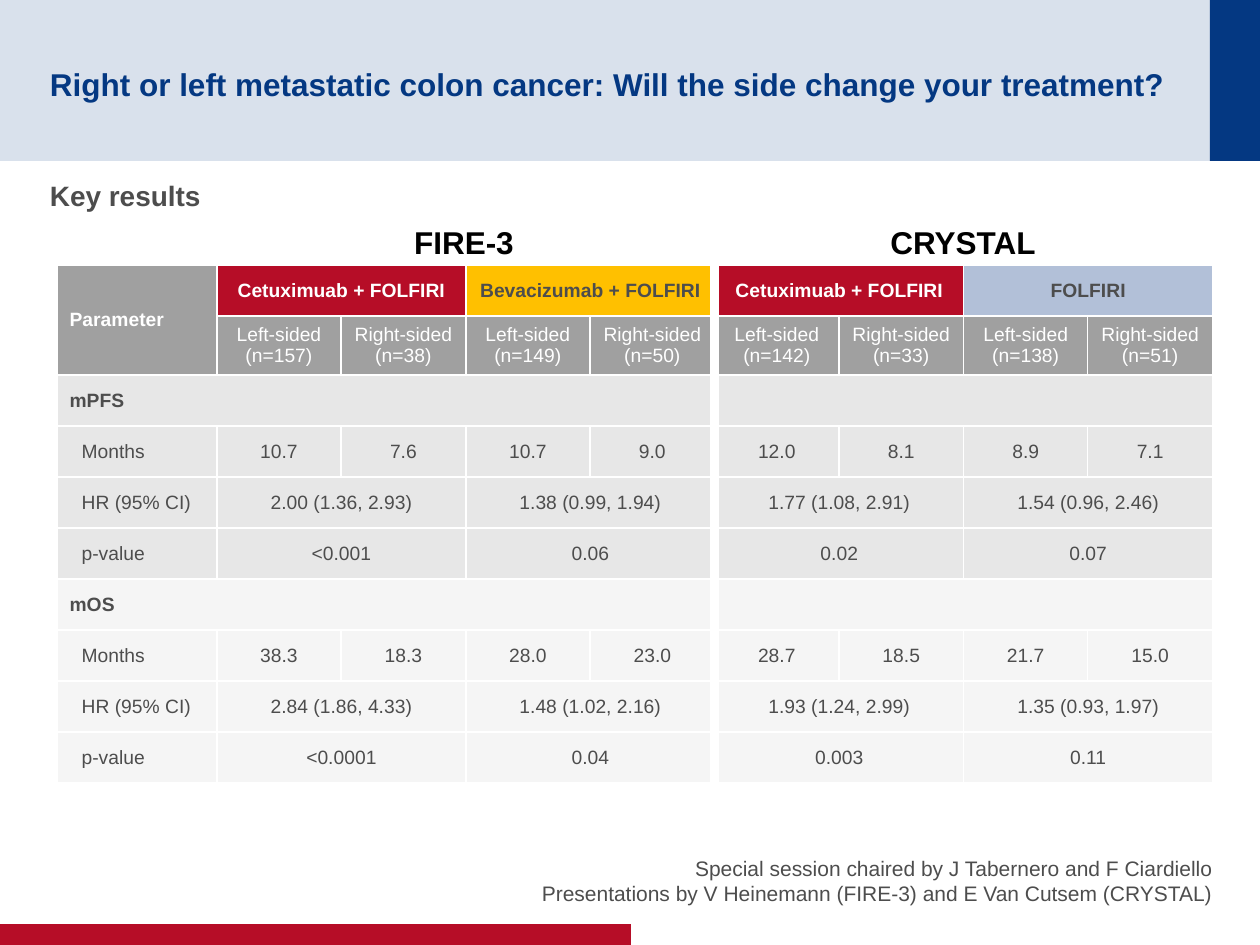
import dataclasses
import pptx
import pptx.dml.color
import pptx.enum.shapes
import pptx.enum.text
import pptx.oxml
import pptx.oxml.ns
import pptx.util

EMU_PER_PX = 914400 / 126
ALIGN = pptx.enum.text.PP_ALIGN
ANCHOR = pptx.enum.text.MSO_ANCHOR


@dataclasses.dataclass(frozen=True)
class Theme:
    font: str = "Arial"
    navy: str = "043882"
    red: str = "B60D27"
    amber: str = "FFC000"
    pale_blue: str = "B2C0D8"
    gray: str = "A0A0A0"
    ink: str = "4D4D4D"
    black: str = "000000"
    white: str = "FFFFFF"
    title_size: int = 18
    heading_size: int = 16
    note_size: int = 12
    cell_size: int = 11
    thin: int = 1
    gap: int = 6


THEME = Theme()
PAIRS = (1, 2, 2, 2, 2)
SINGLES = (1,) * 9
BAND = (5, 4)
LAST_FIRE_COLUMN = 4

PATIENTS = (157, 38, 149, 50, 142, 33, 138, 51)
ARMS = (
    ("Cetuximuab + FOLFIRI", THEME.red, THEME.white),
    ("Bevacizumab + FOLFIRI", THEME.amber, THEME.ink),
    ("Cetuximuab + FOLFIRI", THEME.red, THEME.white),
    ("FOLFIRI", THEME.pale_blue, THEME.ink),
)
OUTCOMES = (
    ("mPFS", 25,
     ("10.7", "7.6", "10.7", "9.0", "12.0", "8.1", "8.9", "7.1"),
     ("2.00 (1.36, 2.93)", "1.38 (0.99, 1.94)", "1.77 (1.08, 2.91)", "1.54 (0.96, 2.46)"),
     ("<0.001", "0.06", "0.02", "0.07")),
    ("mOS", 10,
     ("38.3", "18.3", "28.0", "23.0", "28.7", "18.5", "21.7", "15.0"),
     ("2.84 (1.86, 4.33)", "1.48 (1.02, 2.16)", "1.93 (1.24, 2.99)", "1.35 (0.93, 1.97)"),
     ("<0.0001", "0.04", "0.003", "0.11")),
)


def px(length):
    return pptx.util.Emu(round(length * EMU_PER_PX))


def rgb(color):
    return pptx.dml.color.RGBColor.from_string(color)


def paint(fill, holder, color, opacity=100):
    fill.solid()
    fill.fore_color.rgb = rgb(color)
    if opacity < 100:
        node = holder.find(".//" + pptx.oxml.ns.qn("a:srgbClr"))
        alpha = node.makeelement(pptx.oxml.ns.qn("a:alpha"), {"val": str(opacity * 1000)})
        node.append(alpha)


def write_text(frame, text, size, color, bold=False, align=ALIGN.LEFT, indent=0):
    for index, line in enumerate(text.split("\n")):
        para = frame.add_paragraph() if index else frame.paragraphs[0]
        para.alignment = align
        if indent:
            properties = para._p.get_or_add_pPr()
            properties.set("marL", str(px(indent)))
            properties.set("indent", "0")
        span = para.add_run()
        span.text = line
        span.font.name = THEME.font
        span.font.size = pptx.util.Pt(size)
        span.font.bold = bold
        span.font.color.rgb = rgb(color)


def add_block(page, left, top, width, height, color, opacity=100):
    block = page.shapes.add_shape(
        pptx.enum.shapes.MSO_SHAPE.RECTANGLE, px(left), px(top), px(width), px(height))
    block.shadow.inherit = False
    block.line.fill.background()
    paint(block.fill, block._element.spPr, color, opacity)


def add_text(page, left, top, width, height, text, insets=(0, 6, 0, 0),
             anchor=ANCHOR.TOP, wrap=True, **style):
    box = page.shapes.add_textbox(px(left), px(top), px(width), px(height))
    frame = box.text_frame
    frame.word_wrap = wrap
    frame.vertical_anchor = anchor
    frame.margin_left, frame.margin_top, frame.margin_right, frame.margin_bottom = map(px, insets)
    write_text(frame, text, **style)


def set_borders(cell, first, last):
    widths = {
        "lnL": THEME.gap if first == LAST_FIRE_COLUMN + 1 else THEME.thin,
        "lnR": THEME.gap if last == LAST_FIRE_COLUMN else THEME.thin,
        "lnT": THEME.thin,
        "lnB": THEME.thin,
    }
    properties = cell._tc.get_or_add_tcPr()
    for index, (side, width) in enumerate(widths.items()):
        border = pptx.oxml.parse_xml(
            f'<a:{side} {pptx.oxml.ns.nsdecls("a")} w="{pptx.util.Pt(width)}">'
            f'<a:solidFill><a:srgbClr val="{THEME.white}"/></a:solidFill></a:{side}>')
        properties.insert(index, border)


def fill_cell(table, row, column, span, text, back, opacity=100, **style):
    last = column + span - 1
    cell = table.cell(row, column)
    if span > 1:
        cell.merge(table.cell(row, last))
    for position in range(column, last + 1):
        part = table.cell(row, position)
        paint(part.fill, part._tc.get_or_add_tcPr(), back, opacity)
        set_borders(part, position, last if position == column else position)
    cell.vertical_anchor = ANCHOR.MIDDLE
    if text:
        write_text(cell.text_frame, text, size=THEME.cell_size, **style)


def fill_row(table, row, spans, texts, styles):
    column = 0
    for span, text, style in zip(spans, texts, styles):
        fill_cell(table, row, column, span, text, **style)
        column += span


def add_results(page):
    table = page.shapes.add_table(10, 9, px(57), px(265), px(1156), px(510)).table
    for column, width in zip(table.columns, (160,) + (124, 125) * 4):
        column.width = px(width)
    for row in table.rows:
        row.height = px(51)

    label = dict(back=THEME.gray, color=THEME.white, bold=True)
    arm_styles = [dict(back=back, color=color, bold=True, align=ALIGN.CENTER)
                  for _, back, color in ARMS]
    fill_row(table, 0, PAIRS, ["Parameter"] + [arm[0] for arm in ARMS], [label] + arm_styles)
    side = dict(back=THEME.gray, color=THEME.white, align=ALIGN.CENTER)
    sides = [f"{'Right' if index % 2 else 'Left'}-sided\n(n={count})"
             for index, count in enumerate(PATIENTS)]
    fill_row(table, 1, SINGLES, [""] + sides, [label] + [side] * 8)
    table.cell(0, 0).merge(table.cell(1, 0))

    for index, (name, opacity, months, ratios, p_values) in enumerate(OUTCOMES):
        top = 2 + 4 * index
        base = dict(back=THEME.gray, opacity=opacity, color=THEME.ink)
        fill_row(table, top, BAND, [name, ""], [dict(base, bold=True)] * 2)
        measures = (("Months", SINGLES, months), ("HR (95% CI)", PAIRS, ratios),
                    ("p-value", PAIRS, p_values))
        for offset, (measure, spans, values) in enumerate(measures, 1):
            styles = [dict(base, indent=12)] + [dict(base, align=ALIGN.CENTER)] * len(values)
            fill_row(table, top + offset, spans, (measure,) + values, styles)


def main():
    deck = pptx.Presentation()
    deck.slide_width, deck.slide_height = px(1260), px(945)
    page = deck.slides.add_slide(deck.slide_layouts[6])

    add_block(page, 0, 0, 1260, 161, THEME.navy, 15)
    add_block(page, 1210, 0, 50, 161, THEME.navy)
    add_block(page, 0, 924, 631, 21, THEME.red)
    add_text(page, 50, 25, 1135, 111,
             "Right or left metastatic colon cancer: Will the side change your treatment?",
             anchor=ANCHOR.MIDDLE, size=THEME.title_size, color=THEME.navy, bold=True)
    add_text(page, 50, 173, 1160, 44, "Key results",
             size=THEME.heading_size, color=THEME.ink, bold=True)
    add_results(page)
    for left, width, study in ((401, 126, "FIRE-3"), (877, 172, "CRYSTAL")):
        add_text(page, left, 217, width, 50, study, insets=(13, 6, 13, 6), wrap=False,
                 size=THEME.title_size, color=THEME.black, bold=True, align=ALIGN.CENTER)
    add_text(page, 517, 839, 696, 67,
             "Special session chaired by J Tabernero and F Ciardiello\n"
             "Presentations by V Heinemann (FIRE-3) and E Van Cutsem (CRYSTAL)",
             insets=(0, 0, 0, 0), anchor=ANCHOR.BOTTOM,
             size=THEME.note_size, color=THEME.ink, align=ALIGN.RIGHT)

    deck.save("out.pptx")


if __name__ == "__main__":
    main()
